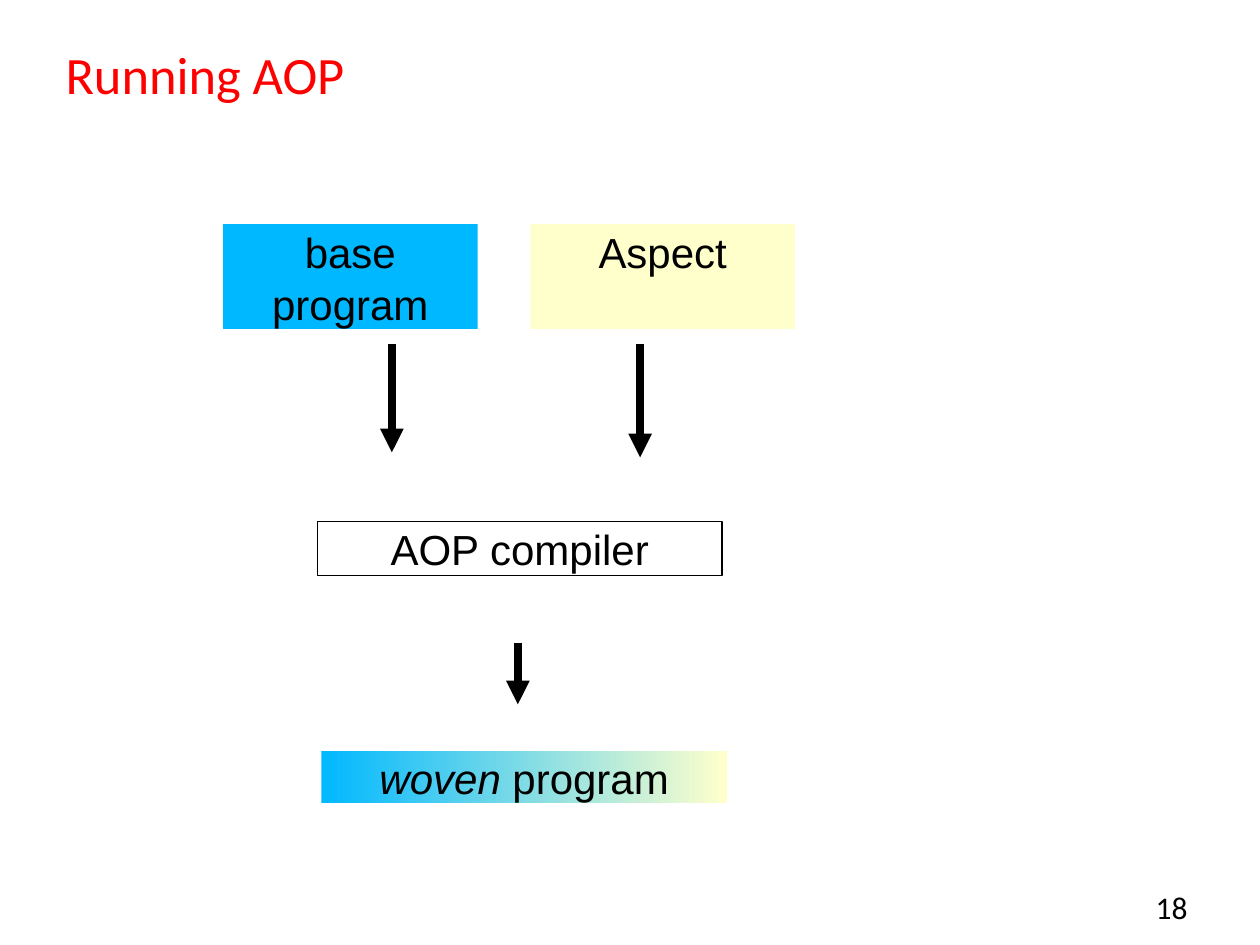
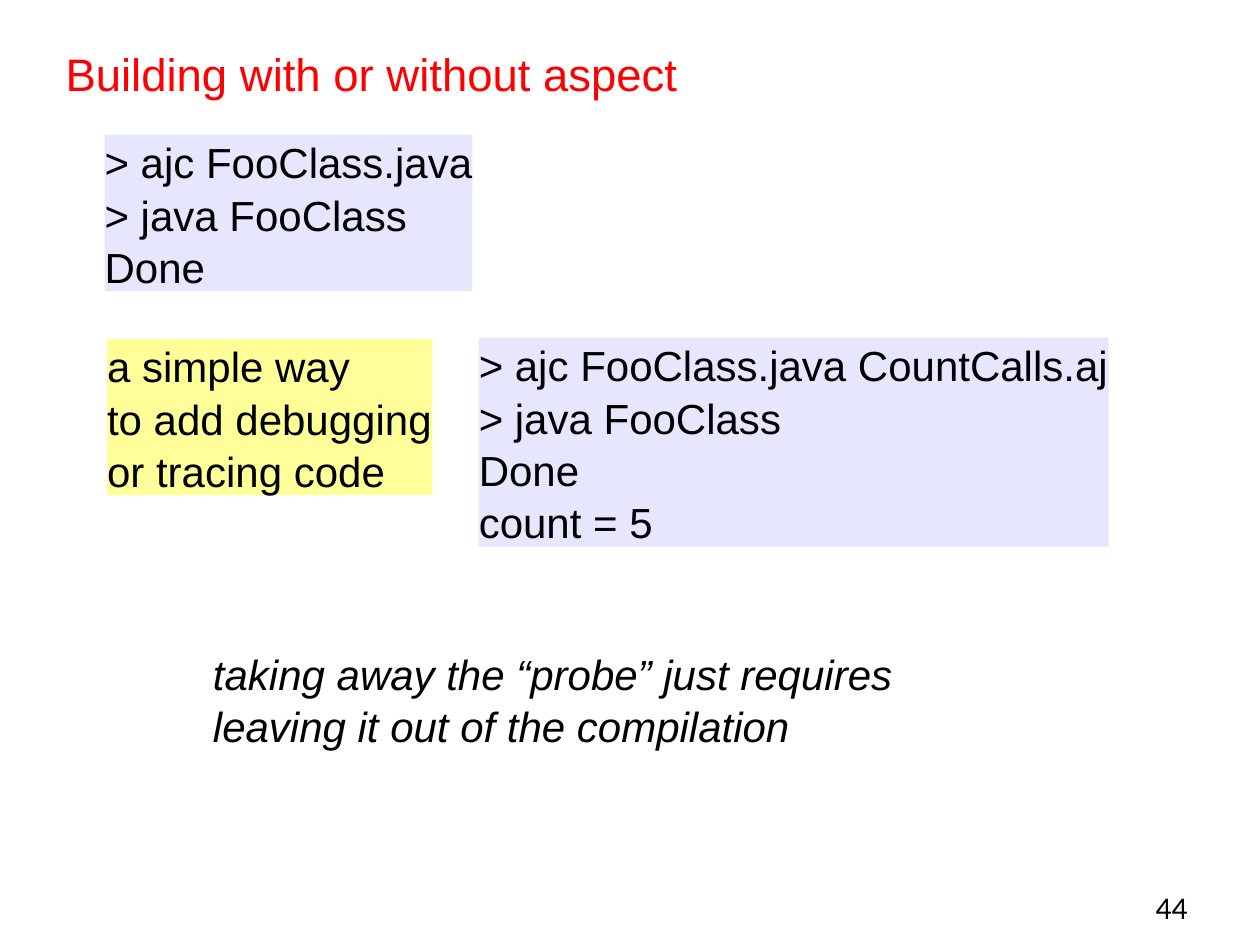
from lxml import etree
from pptx import Presentation
from pptx.dml.color import RGBColor
from pptx.enum.dml import MSO_THEME_COLOR
from pptx.enum.shapes import MSO_CONNECTOR, MSO_SHAPE
from pptx.enum.text import MSO_ANCHOR, MSO_AUTO_SIZE, PP_ALIGN
from pptx.oxml.ns import qn
from pptx.util import Inches, Pt

BLACK = RGBColor(0x00, 0x00, 0x00)
RED = RGBColor(0xFF, 0x00, 0x00)
BLUE = RGBColor(0x00, 0xB8, 0xFF)
CREAM = RGBColor(0xFF, 0xFF, 0xCC)
LAVENDER = RGBColor(0xE6, 0xE6, 0xFF)
YELLOW = RGBColor(0xFF, 0xFF, 0x99)
LEFT, CENTER, RIGHT = PP_ALIGN.LEFT, PP_ALIGN.CENTER, PP_ALIGN.RIGHT
TOP, MIDDLE = MSO_ANCHOR.TOP, MSO_ANCHOR.MIDDLE
RECTANGLE, ROUNDED = MSO_SHAPE.RECTANGLE, MSO_SHAPE.ROUNDED_RECTANGLE
STRAIGHT = MSO_CONNECTOR.STRAIGHT
FIXED = MSO_AUTO_SIZE.NONE
TITLE_ONLY = 5
NO_INSETS = {"margin_left": 0, "margin_right": 0, "margin_top": 0, "margin_bottom": 0}

presentation = Presentation()
presentation.slide_width = Inches(10)
presentation.slide_height = Inches(7.5)
COLUMN = presentation.slide_width / 100
ROW = presentation.slide_height / 75


def place(shape, left, top, width, height):
    box = {"left": left * COLUMN, "top": top * ROW, "width": width * COLUMN, "height": height * ROW}
    for name, value in box.items():
        setattr(shape, name, round(value))


def write(shape, lines, font_name="Arial", size=24, color=BLACK, align=LEFT,
          anchor=TOP, spacing=1.04, wrap=True, italic=False, frame_format=NO_INSETS):
    frame = shape.text_frame
    for name, value in {"word_wrap": wrap, "auto_size": FIXED,
                        "vertical_anchor": anchor, **frame_format}.items():
        setattr(frame, name, value)
    frame.text = "\n".join(lines)
    for paragraph in frame.paragraphs:
        paragraph.alignment = align
        paragraph.line_spacing = spacing
        for run in paragraph.runs:
            for name, value in {"name": font_name, "size": Pt(size), "italic": italic}.items():
                setattr(run.font, name, value)
            run.font.color.rgb = color


slides = []
for title, title_font, title_size, number in (
    ("Running AOP", "Calibri", 30, "18 "),
    ("Building with or without aspect", "Arial", 26, "44 "),
):
    slide = presentation.slides.add_slide(presentation.slide_layouts[TITLE_ONLY])
    place(slide.shapes.title, 4.2, 3.3, 90.8, 5)
    write(slide.shapes.title, [title], title_font, title_size, RED,
          anchor=MIDDLE, spacing=1.0, frame_format={})
    page_number = slide.shapes.add_textbox(0, 0, 0, 0)
    place(page_number, 88.3, 70, 7.5, 5)
    write(page_number, [number], "Calibri", 18, align=RIGHT, spacing=1.0, frame_format={})
    slides.append(slide)
diagram_slide, build_slide = slides

stages = {}
for name, lines, fill, *box in (
    ("base", ["base", "program"], BLUE, 17.7, 17.8, 20.2, 8.3),
    ("aspect", ["Aspect"], CREAM, 42.1, 17.8, 21, 8.3),
    ("compiler", ["AOP compiler"], None, 25.2, 41.4, 32.1, 4.3),
    ("woven", ["woven program"], None, 25.5, 59.6, 32.2, 4.1),
):
    stage = diagram_slide.shapes.add_shape(ROUNDED, 0, 0, 0, 0)
    stage.adjustments[0] = 0
    stage.shadow.inherit = False
    place(stage, *box)
    stage.line.fill.background()
    if fill:
        stage.fill.solid()
        stage.fill.fore_color.rgb = fill
    else:
        stage.fill.background()
    write(stage, lines, align=CENTER)
    stages[name] = stage

stages["compiler"].line.color.rgb = BLACK
stages["compiler"].line.width = Pt(0.75)

woven = stages["woven"]
woven.fill.gradient()
woven.fill.gradient_angle = 0
for stop, color, position in zip(woven.fill.gradient_stops, (BLUE, CREAM), (0, 1)):
    stop.color.rgb = color
    stop.position = position
woven_paragraph = woven.text_frame.paragraphs[0]
woven_run = woven_paragraph.runs[0]
woven_run.text = "woven"
woven_run.font.italic = True
program_run = woven_paragraph.add_run()
program_run.text = " program"
for name, value in {"name": "Arial", "size": Pt(24), "italic": False}.items():
    setattr(program_run.font, name, value)
program_run.font.color.rgb = BLACK

for column, start, end in ((31.1, 27.3, 35.9), (50.8, 27.3, 36.3), (41.1, 51, 55.9)):
    arrow = diagram_slide.shapes.add_connector(
        STRAIGHT, round(column * COLUMN), round(start * ROW), round(column * COLUMN), round(end * ROW))
    arrow.line.color.rgb = BLACK
    arrow.line.width = Pt(4.5)
    etree.SubElement(arrow.line._get_or_add_ln(), qn("a:tailEnd"), type="triangle")
    etree.SubElement(arrow._element.spPr, qn("a:effectLst"))

for lines, fill, *box in (
    (["> ajc FooClass.java", "> java FooClass", "Done"], LAVENDER, 8.3, 10.7, 29.2, 12.4),
    (["> ajc FooClass.java CountCalls.aj", "> java FooClass", "Done", "count = 5"],
     LAVENDER, 38, 26.8, 50, 16.6),
    (["a simple way", "to add debugging", "or tracing code"], YELLOW, 8.5, 26.9, 25.8, 12.4),
):
    panel = build_slide.shapes.add_shape(RECTANGLE, 0, 0, 0, 0)
    panel.shadow.inherit = False
    place(panel, *box)
    panel.fill.solid()
    panel.fill.fore_color.rgb = fill
    panel.line.fill.background()
    write(panel, lines, wrap=False)

remark = build_slide.shapes.add_textbox(0, 0, 0, 0)
place(remark, 16.9, 51.3, 54.9, 8.3)
write(remark, ["taking away the “probe” just requires", "leaving it out of the compilation"],
      italic=True)

presentation.save("out.pptx")
